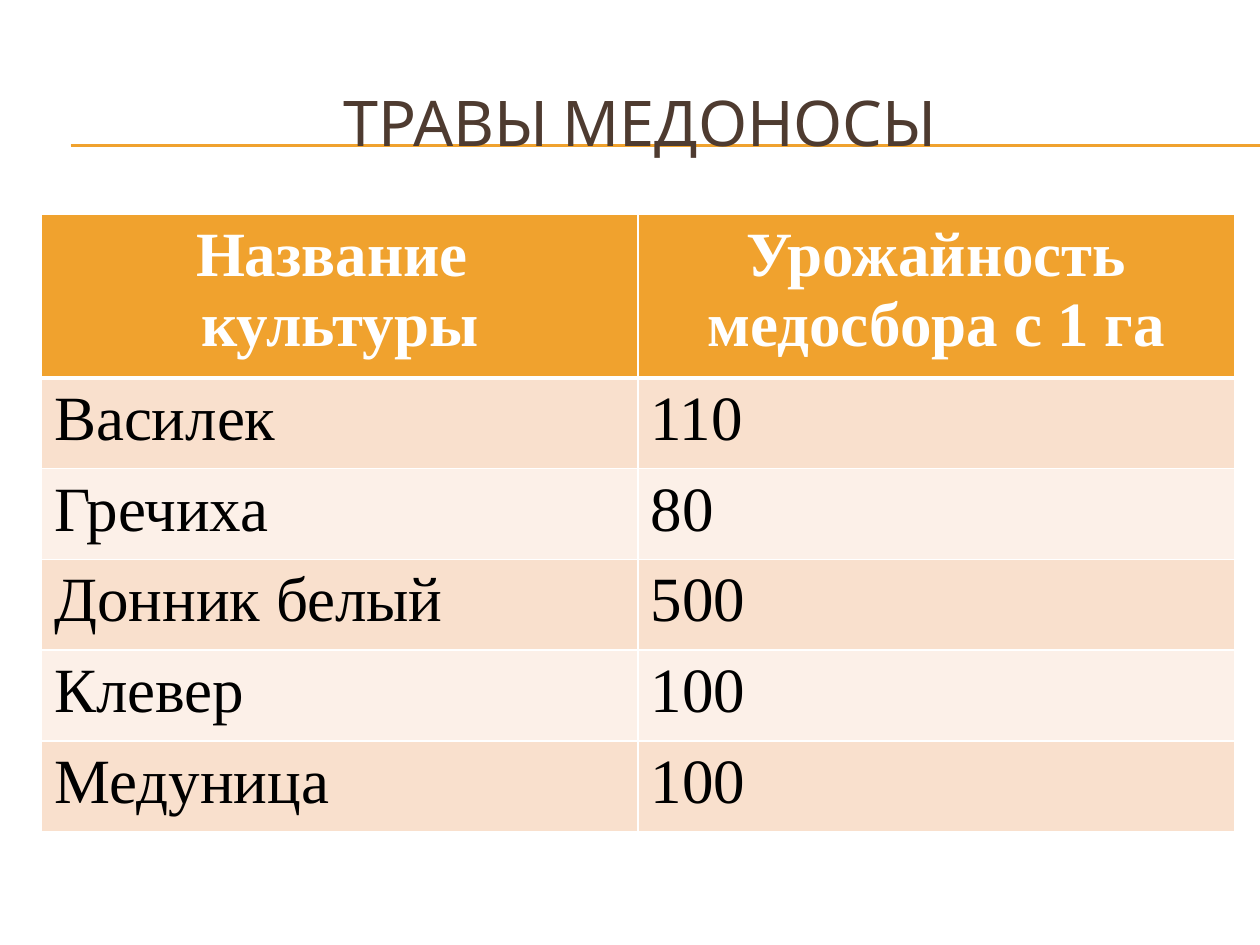
from lxml import etree
from pptx import Presentation
from pptx.dml.color import RGBColor
from pptx.enum import shapes, text
from pptx.oxml import ns
from pptx.util import Inches, Pt

ORANGE = RGBColor(0xF0, 0xA2, 0x2E)
BROWN = RGBColor(0x4E, 0x3B, 0x30)
PEACH = RGBColor(0xF9, 0xE0, 0xCD)
CREAM = RGBColor(0xFC, 0xF0, 0xE8)
WHITE = RGBColor(0xFF, 0xFF, 0xFF)
BLACK = RGBColor(0x00, 0x00, 0x00)

HONEY_YIELDS = [
    ("Название \nкультуры", "Урожайность медосбора с 1 га"),
    ("Василек", "110"),
    ("Гречиха", "80"),
    ("Донник белый", "500"),
    ("Клевер", "100"),
    ("Медуница", "100"),
]


def set_borders(cell, widths):
    """Give the cell white borders; widths maps a side tag to points."""
    properties = cell._tc.get_or_add_tcPr()
    for index, (side, width) in enumerate(widths.items()):
        border = etree.Element(ns.qn(f"a:{side}"), w=str(Pt(width)))
        fill = etree.SubElement(border, ns.qn("a:solidFill"))
        etree.SubElement(fill, ns.qn("a:srgbClr"), val=str(WHITE))
        properties.insert(index, border)


prs = Presentation()
prs.slide_width, prs.slide_height = Inches(10), Inches(7.5)
slide = prs.slides.add_slide(prs.slide_layouts[6])

for y in (1.15, 1.16):
    rule = slide.shapes.add_connector(
        shapes.MSO_CONNECTOR.STRAIGHT, Inches(0.56), Inches(y), Inches(10), Inches(y))
    rule.line.color.rgb = ORANGE
    rule.line.width = Pt(0.75)
    etree.SubElement(rule._element.spPr, ns.qn("a:effectLst"))

title = slide.shapes.add_textbox(Inches(0.33), Inches(0.5), Inches(9.5), Inches(0.92))
title.text_frame.word_wrap = True
title.text_frame.vertical_anchor = text.MSO_ANCHOR.MIDDLE
heading = title.text_frame.paragraphs[0]
heading.text = "ТРАВЫ МЕДОНОСЫ"
heading.alignment = text.PP_ALIGN.CENTER
heading.font.name = "Cabin"
heading.font.size = Pt(36)
heading.font.color.rgb = BROWN

row_height = Inches(0.72)
yields = slide.shapes.add_table(
    len(HONEY_YIELDS), 2, Inches(0.33), Inches(1.7),
    Inches(9.47), row_height * len(HONEY_YIELDS)).table

for r, record in enumerate(HONEY_YIELDS):
    is_header = r == 0
    for c, value in enumerate(record):
        cell = yields.cell(r, c)
        cell.text = value
        cell.fill.solid()
        cell.fill.fore_color.rgb = ORANGE if is_header else PEACH if r % 2 else CREAM
        set_borders(cell, {"lnL": 1, "lnR": 1, "lnT": 3 if r == 1 else 1,
                           "lnB": 3 if is_header else 1})
        for paragraph in cell.text_frame.paragraphs:
            paragraph.alignment = text.PP_ALIGN.CENTER if is_header else text.PP_ALIGN.LEFT
            paragraph.font.name = "Times New Roman"
            paragraph.font.size = Pt(36)
            paragraph.font.bold = is_header
            paragraph.font.color.rgb = WHITE if is_header else BLACK

prs.save("out.pptx")
